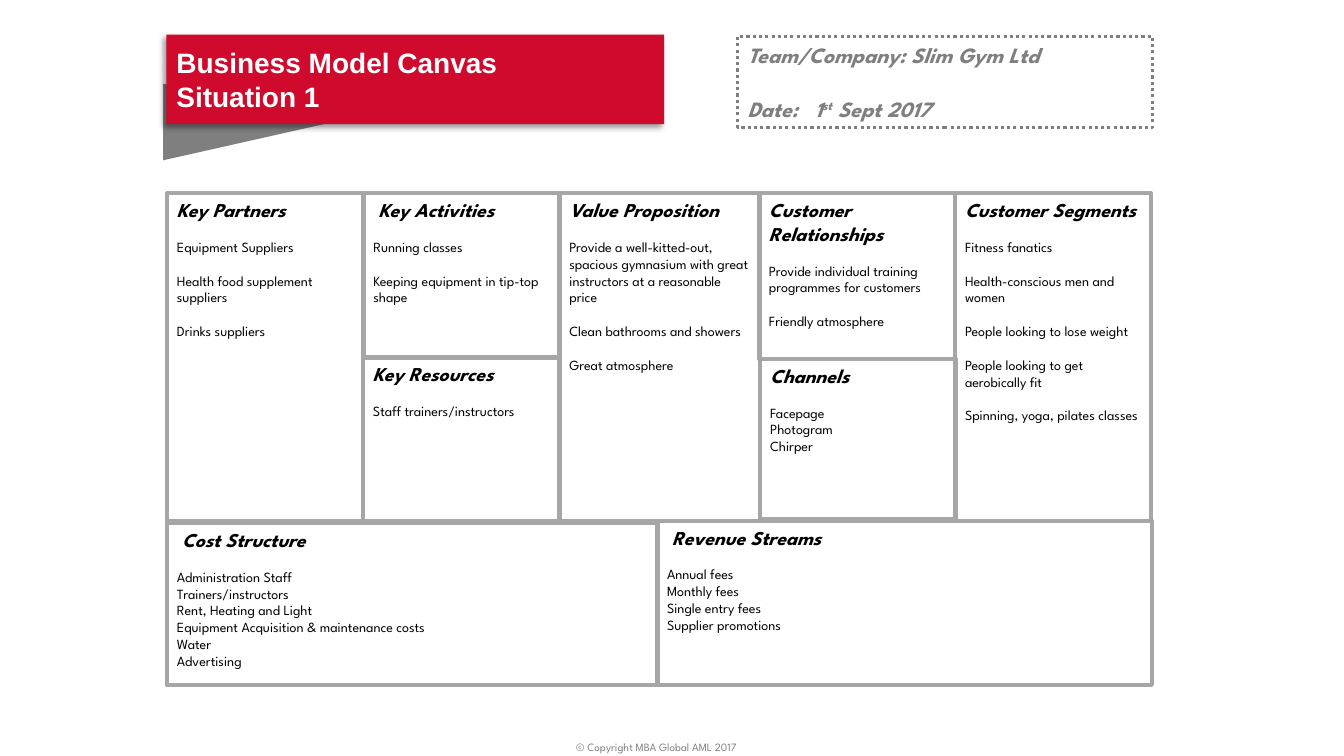
"""Build a one-page business model canvas slide."""
import pptx
import pptx.util
import pptx.dml.color
import pptx.enum.dml
import pptx.enum.shapes
import pptx.enum.text
import pptx.oxml
import pptx.oxml.ns

Cm, Pt = pptx.util.Cm, pptx.util.Pt
RGBColor = pptx.dml.color.RGBColor
SHAPES = pptx.enum.shapes.MSO_SHAPE
ANCHOR = pptx.enum.text.MSO_ANCHOR

BLACK = RGBColor(0x00, 0x00, 0x00)
WHITE = RGBColor(0xFF, 0xFF, 0xFF)
RED = RGBColor(0xD0, 0x0A, 0x2D)
DARK_GREY = RGBColor(0x7F, 0x7F, 0x7F)
FOOTER_GREY = RGBColor(0x80, 0x80, 0x80)
BORDER_GREY = RGBColor(0xA6, 0xA6, 0xA6)

FONT = "League Spartan"
HEADING = {"name": FONT, "size": Pt(14), "bold": True, "italic": True}
BODY = {"name": FONT, "size": Pt(10), "bold": False, "italic": False}
TEAM = {"name": FONT, "size": Pt(15.6), "bold": True, "italic": True}
TITLE = {"name": "Arial", "size": Pt(20), "bold": True}
FOOTER = {"name": FONT, "size": Pt(8)}


def add_paragraph(frame, runs, format_values, color, space_before=0):
    paragraph = frame.paragraphs[0]
    if paragraph.runs:
        paragraph = frame.add_paragraph()
        paragraph.space_before = Pt(space_before)
    paragraph.alignment = pptx.enum.text.PP_ALIGN.LEFT
    for text in runs:
        run = paragraph.add_run()
        run.text = text
        for name, value in format_values.items():
            setattr(run.font, name, value)
        run.font.color.rgb = color
    return paragraph


def add_box(left, top, width, height, line_color, line_width, anchor):
    shape = slide.shapes.add_shape(
        SHAPES.RECTANGLE, Cm(left), Cm(top), Cm(width), Cm(height))
    shape.shadow.inherit = False
    shape.fill.background()
    shape.line.color.rgb = line_color
    shape.line.width = Pt(line_width)
    shape.text_frame.word_wrap = True
    shape.text_frame.vertical_anchor = anchor
    return shape


presentation = pptx.Presentation()
presentation.slide_width = Cm(33.87)
presentation.slide_height = Cm(19.05)
slide = presentation.slides.add_slide(presentation.slide_layouts[5])

# heading, left, top, width, height, heading indent, gap between items, items
blocks = [
    ("Key Partners", 4.21, 4.87, 4.93, 8.26, 0, 12,
     ["Equipment Suppliers", "Health food supplement suppliers",
      "Drinks suppliers"]),
    ("Key Activities", 9.16, 4.87, 4.93, 4.14, 0.13, 12,
     ["Running classes", "Keeping equipment in tip-top shape"]),
    ("Value Proposition", 14.1, 4.87, 5.05, 8.26, 0, 12,
     ["Provide a well-kitted-out, spacious gymnasium with great instructors "
      "at a reasonable price",
      "Clean bathrooms and showers", "Great atmosphere"]),
    ("Customer Relationships", 19.13, 4.87, 4.93, 4.17, 0, 12,
     ["Provide individual training programmes for customers",
      "Friendly atmosphere"]),
    ("Customer Segments", 24.07, 4.87, 4.93, 8.26, 0, 12,
     ["Fitness fanatics", "Health-conscious men and women",
      "People looking to lose weight", "People looking to get aerobically fit",
      "Spinning, yoga, pilates classes"]),
    ("Key Resources", 9.15, 9, 4.93, 4.14, 0, 12,
     ["Staff trainers/instructors"]),
    ("Channels", 19.16, 9.04, 4.93, 4.04, 0, 0,
     ["Facepage", "Photogram", "Chirper"]),
    ("Cost Structure", 4.21, 13.18, 12.37, 4.09, 0.13, 0,
     ["Administration Staff", "Trainers/instructors",
      "Rent, Heating and Light", "Equipment Acquisition & maintenance costs",
      "Water", "Advertising"]),
    ("Revenue Streams", 16.56, 13.12, 12.47, 4.14, 0.13, 0,
     ["Annual fees", "Monthly fees", "Single entry fees",
      "Supplier promotions"]),
]
for name, left, top, width, height, indent, gap, items in blocks:
    block = add_box(left, top, width, height, BORDER_GREY, 3, ANCHOR.TOP)
    heading = add_paragraph(block.text_frame, [name], HEADING, BLACK)
    heading._p.get_or_add_pPr().set("marL", str(Cm(indent)))
    for index, item in enumerate(items):
        add_paragraph(block.text_frame, [item], BODY, BLACK,
                      gap if index else 12)

ribbon_fold = slide.shapes.add_shape(
    SHAPES.FLOWCHART_EXTRACT, Cm(5.29), Cm(0.93), Cm(1.93), Cm(4.29))
ribbon_fold.rotation = 90
ribbon_fold.shadow.inherit = False
ribbon_fold.fill.solid()
ribbon_fold.fill.fore_color.rgb = DARK_GREY
ribbon_fold.line.fill.background()

title = slide.shapes.title
title.left, title.top, title.width, title.height = (
    Cm(4.19), Cm(0.87), Cm(12.55), Cm(2.26))
title.fill.solid()
title.fill.fore_color.rgb = RED
title.text_frame.auto_size = pptx.enum.text.MSO_AUTO_SIZE.NONE
title.text_frame.vertical_anchor = ANCHOR.MIDDLE
for line in ("Business Model Canvas", "Situation 1"):
    add_paragraph(title.text_frame, [line], TITLE, WHITE)
title._element.spPr.append(pptx.oxml.parse_xml(
    f'<a:effectLst {pptx.oxml.ns.nsdecls("a")}>'
    f'<a:outerShdw blurRad="{Pt(4)}" dist="{Pt(3)}" dir="8100000">'
    '<a:srgbClr val="000000"><a:alpha val="40000"/></a:srgbClr>'
    '</a:outerShdw></a:effectLst>'))
ribbon_fold._element.addnext(title._element)

team_box = add_box(18.59, 0.92, 10.46, 2.29, DARK_GREY, 2.25, ANCHOR.MIDDLE)
team_box.line.dash_style = pptx.enum.dml.MSO_LINE.ROUND_DOT
add_paragraph(team_box.text_frame, ["Team/Company: Slim Gym Ltd"],
              TEAM, DARK_GREY)
date = add_paragraph(team_box.text_frame, ["Date:\t1", "st", " Sept 2017"],
                     TEAM, DARK_GREY, 19.5)
date.runs[1].font._element.set("baseline", "30000")
date._p.get_or_add_pPr().append(pptx.oxml.parse_xml(
    f'<a:tabLst {pptx.oxml.ns.nsdecls("a")}>'
    f'<a:tab pos="{Cm(1.7)}" algn="l"/></a:tabLst>'))

footer = slide.shapes.add_textbox(Cm(14.27), Cm(18.52), Cm(5.33), Cm(0.5))
footer.text_frame.word_wrap = False
footer.text_frame.margin_bottom = 0
add_paragraph(footer.text_frame, ["© Copyright MBA Global AML 2017"],
              FOOTER, FOOTER_GREY)

presentation.save("out.pptx")
